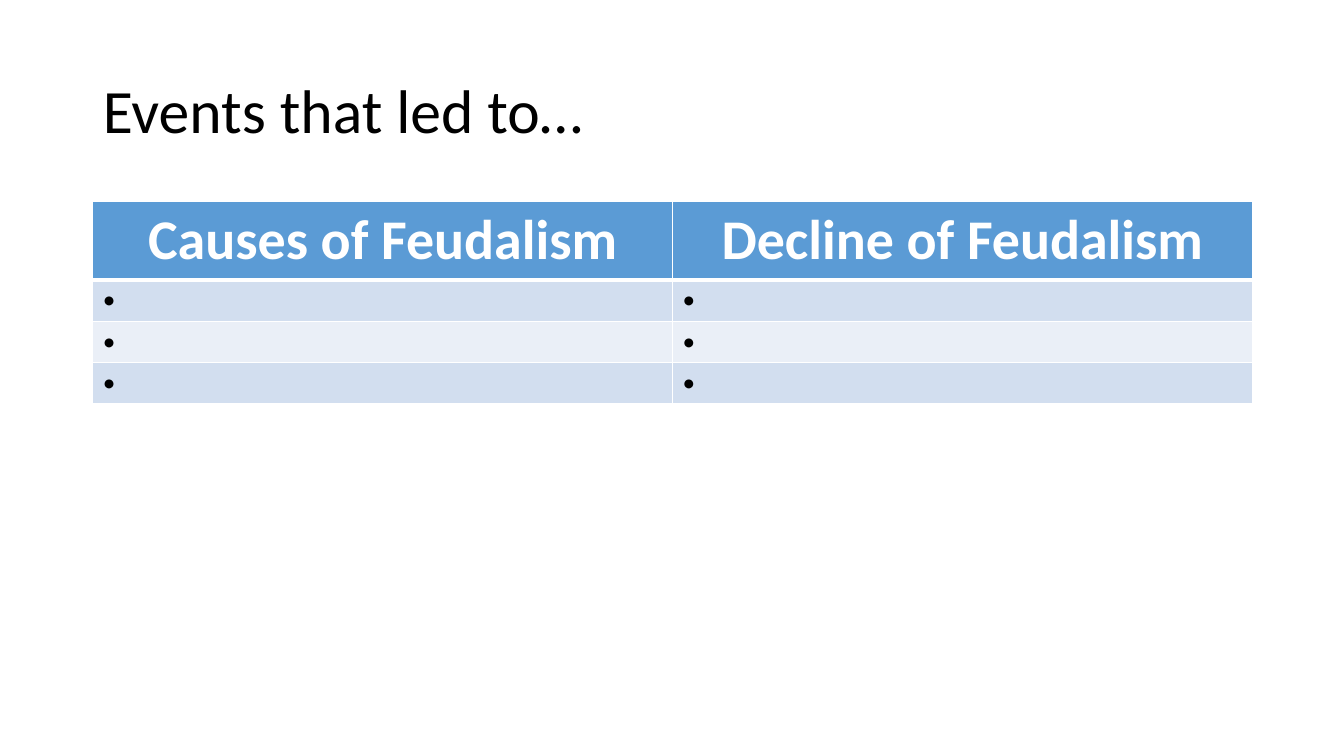
from lxml.etree import SubElement
from pptx import Presentation
from pptx.dml.color import RGBColor
from pptx.enum.text import MSO_ANCHOR, PP_ALIGN
from pptx.oxml.ns import qn
from pptx.util import Inches, Pt

WIDE, HIGH = Inches(13.33), Inches(7.5)
LEFT, SPAN = Inches(0.92), Inches(11.5)
FONT = "Calibri"
HUES = {
    "black": "000000",
    "white": "FFFFFF",
    "head": "5B9BD5",
    "odd": "D2DEEF",
    "even": "EAEFF7",
}
ROWS = [["Causes of Feudalism", "Decline of Feudalism"]] + [["•", "•"]] * 3


def hue(name):
    return RGBColor.from_string(HUES[name])


def style(para, size, color, bold=False):
    font = para.font
    font.name, font.size, font.bold = FONT, Pt(size), bold
    font.color.rgb = hue(color)


def edge(cell, side, width):
    """Draw one white cell border; call before the fill is set."""
    line = SubElement(cell._tc.get_or_add_tcPr(), qn(f"a:ln{side}"), w=str(Pt(width)))
    fill = SubElement(line, qn("a:solidFill"))
    SubElement(fill, qn("a:srgbClr"), val=HUES["white"])


def add_title(slide, text):
    title = slide.shapes.title
    title.left, title.top = LEFT, Inches(0.4)
    title.width, title.height = SPAN, Inches(1.45)
    frame = title.text_frame
    frame.text = text
    frame.word_wrap = True
    frame.vertical_anchor = MSO_ANCHOR.MIDDLE
    para = frame.paragraphs[0]
    para.alignment = PP_ALIGN.LEFT
    para.line_spacing = 0.9
    style(para, 44, "black")


def fill_cell(cell, text, row):
    # Borders: a thick rule parts the header from the body
    for side in "LRTB":
        thick = (row, side) in ((0, "B"), (1, "T"))
        edge(cell, side, 3 if thick else 1)
    cell.fill.solid()
    band = "odd" if row % 2 else "even"
    cell.fill.fore_color.rgb = hue(band if row else "head")

    # Text
    cell.text = text
    para = cell.text_frame.paragraphs[0]
    if row:
        style(para, 18, "black")
    else:
        para.alignment = PP_ALIGN.CENTER
        style(para, 40, "white", True)


def add_grid(slide, rows):
    tall = [Inches(0.77)] + [Inches(0.41)] * (len(rows) - 1)
    cols = len(rows[0])
    grid = slide.shapes.add_table(len(rows), cols, LEFT, Inches(2), SPAN, sum(tall)).table
    for r, texts in enumerate(rows):
        grid.rows[r].height = tall[r]
        for c, text in enumerate(texts):
            fill_cell(grid.cell(r, c), text, r)


def main():
    deck = Presentation()
    deck.slide_width, deck.slide_height = WIDE, HIGH
    slide = deck.slides.add_slide(deck.slide_layouts[5])
    add_title(slide, "Events that led to…")
    add_grid(slide, ROWS)
    deck.save("out.pptx")


if __name__ == "__main__":
    main()
